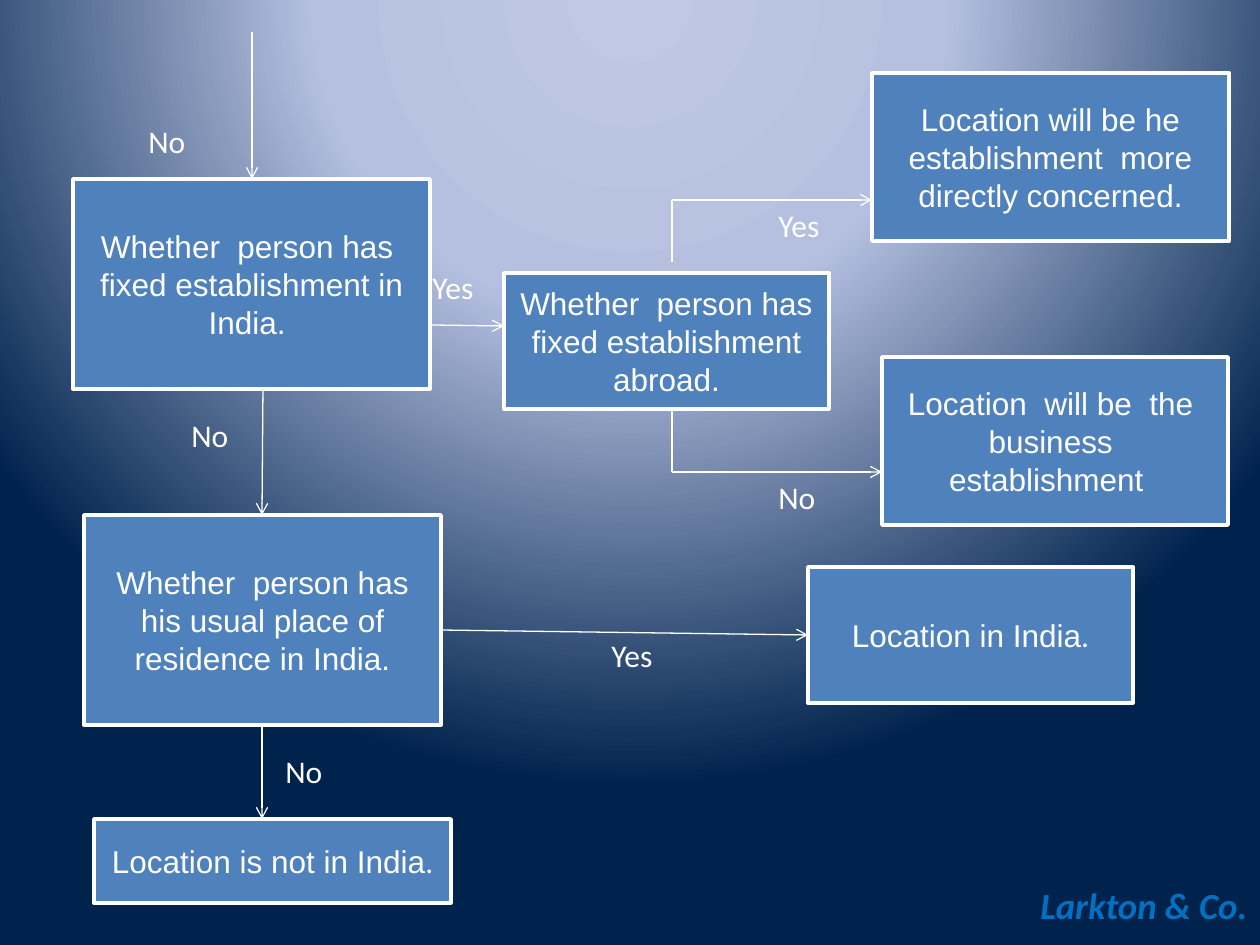
from typing import NamedTuple

from lxml import etree
from pptx import Presentation
from pptx.dml.color import RGBColor
from pptx.enum.shapes import MSO_CONNECTOR as Connector
from pptx.enum.shapes import MSO_SHAPE as Shape
from pptx.enum.text import MSO_ANCHOR as Anchor
from pptx.enum.text import MSO_AUTO_SIZE as AutoSize
from pptx.enum.text import PP_ALIGN as Align
from pptx.oxml import parse_xml
from pptx.oxml.ns import qn
from pptx.util import Emu, Pt

EMU_PER_PX = 914400 / 126
WHITE, BOX_BLUE, FIRM_BLUE = "FFFFFF", "4F81BD", "0070C0"
BACKGROUND_STOPS = [(0, "BFC9E5"), (40, "B5C0E0"), (100, "00234D")]


class Box(NamedTuple):
    left: int
    top: int
    width: int
    height: int
    text: str
    calibri_ending: str = ""


class Line(NamedTuple):
    start_x: int
    start_y: int
    end_x: int
    end_y: int
    has_arrow: bool = True


class Label(NamedTuple):
    left: int
    top: int
    text: str


BOXES = [
    Box(73, 179, 357, 210, "Whether  person has  fixed establishment in India. "),
    Box(504, 273, 325, 136, "Whether  person has fixed establishment abroad."),
    Box(882, 357, 346, 168, "Location  will be  the  business  establishment  "),
    Box(872, 73, 357, 168, "Location will be he establishment  more directly concerned."),
    Box(84, 515, 357, 210, "Whether  person has his usual place of residence in India."),
    Box(808, 567, 325, 136, "Location in India", "."),
    Box(94, 819, 357, 84, "Location is not in India", "."),
]
LINES = [
    Line(252, 32, 252, 179),
    Line(431, 325, 504, 326),
    Line(672, 200, 672, 262, has_arrow=False),
    Line(672, 200, 872, 200),
    Line(672, 410, 672, 472, has_arrow=False),
    Line(672, 472, 882, 472),
    Line(263, 389, 262, 515),
    Line(441, 630, 808, 635),
    Line(262, 725, 262, 819),
]
LABELS = [
    Label(420, 262, "Yes"),
    Label(766, 200, "Yes"),
    Label(766, 472, "No"),
    Label(179, 410, "No"),
    Label(136, 116, "No"),
    Label(599, 630, "Yes"),
    Label(273, 746, "No"),
]


def px(length: int) -> Emu:
    return Emu(round(length * EMU_PER_PX))


def color(value: str) -> RGBColor:
    return RGBColor.from_string(value)


def format_font(font, name: str, size: int, font_color: str) -> None:
    font.name, font.size = name, Pt(size)
    font.color.rgb = color(font_color)


def paint_background(slide) -> None:
    """Fill with a circular gradient centred above the slide's middle."""
    slide.background.fill.solid()
    solid_fill = slide.element.find(".//" + qn("p:bgPr")).find(qn("a:solidFill"))
    stops = "".join(
        f'<a:gs pos="{percent * 1000}"><a:srgbClr val="{value}"/></a:gs>'
        for percent, value in BACKGROUND_STOPS
    )
    gradient = parse_xml(
        '<a:gradFill xmlns:a="http://schemas.openxmlformats.org/drawingml/2006/main"'
        f' rotWithShape="1"><a:gsLst>{stops}</a:gsLst><a:path path="circle">'
        '<a:fillToRect l="50000" t="-80000" r="50000" b="180000"/></a:path></a:gradFill>'
    )
    solid_fill.getparent().replace(solid_fill, gradient)


def draw_box(slide, box: Box) -> None:
    shape = slide.shapes.add_shape(
        Shape.RECTANGLE, px(box.left), px(box.top), px(box.width), px(box.height)
    )
    shape.shadow.inherit = False
    shape.fill.solid()
    shape.fill.fore_color.rgb = color(BOX_BLUE)
    shape.line.color.rgb = color(WHITE)
    shape.line.width = Pt(2)
    frame = shape.text_frame
    frame.word_wrap = True
    frame.vertical_anchor = Anchor.MIDDLE
    paragraph = frame.paragraphs[0]
    paragraph.alignment = Align.CENTER
    format_font(paragraph.font, "Arial", 18, WHITE)
    paragraph.add_run().text = box.text
    if box.calibri_ending:
        ending = paragraph.add_run()
        ending.text = box.calibri_ending
        ending.font.name = "Calibri"


def draw_line(slide, line: Line) -> None:
    connector = slide.shapes.add_connector(
        Connector.STRAIGHT,
        px(line.start_x), px(line.start_y), px(line.end_x), px(line.end_y),
    )
    connector.line.color.rgb = color(WHITE)
    connector.line.width = Pt(0.75)
    if line.has_arrow:
        outline = connector.line._get_or_add_ln()
        etree.SubElement(outline, qn("a:tailEnd"), type="arrow")
    etree.SubElement(connector.element.spPr, qn("a:effectLst"))


def add_text(slide, left: int, top: int, width: int, height: int, text: str):
    """Add an unwrapped one-line text box and return its paragraph."""
    frame = slide.shapes.add_textbox(px(left), px(top), px(width), px(height)).text_frame
    frame.word_wrap = False
    frame.auto_size = AutoSize.SHAPE_TO_FIT_TEXT
    paragraph = frame.paragraphs[0]
    paragraph.text = text
    return paragraph


def draw_label(slide, label: Label) -> None:
    width = 67 if label.text == "Yes" else 63
    paragraph = add_text(slide, label.left, label.top, width, 50, label.text)
    format_font(paragraph.font, "Calibri", 18, WHITE)


def draw_firm_name(slide) -> None:
    paragraph = add_text(slide, 1008, 877, 252, 57, "Larkton & Co.")
    paragraph.alignment = Align.RIGHT
    paragraph.space_before = Pt(4)
    format_font(paragraph.font, "Calibri", 21, FIRM_BLUE)
    paragraph.font.bold = paragraph.font.italic = True


def main() -> None:
    presentation = Presentation()
    presentation.slide_width, presentation.slide_height = px(1260), px(945)
    slide = presentation.slides.add_slide(presentation.slide_layouts[6])
    paint_background(slide)
    draw_firm_name(slide)
    for line in LINES:
        draw_line(slide, line)
    for box in BOXES:
        draw_box(slide, box)
    for label in LABELS:
        draw_label(slide, label)
    presentation.save("out.pptx")


if __name__ == "__main__":
    main()
